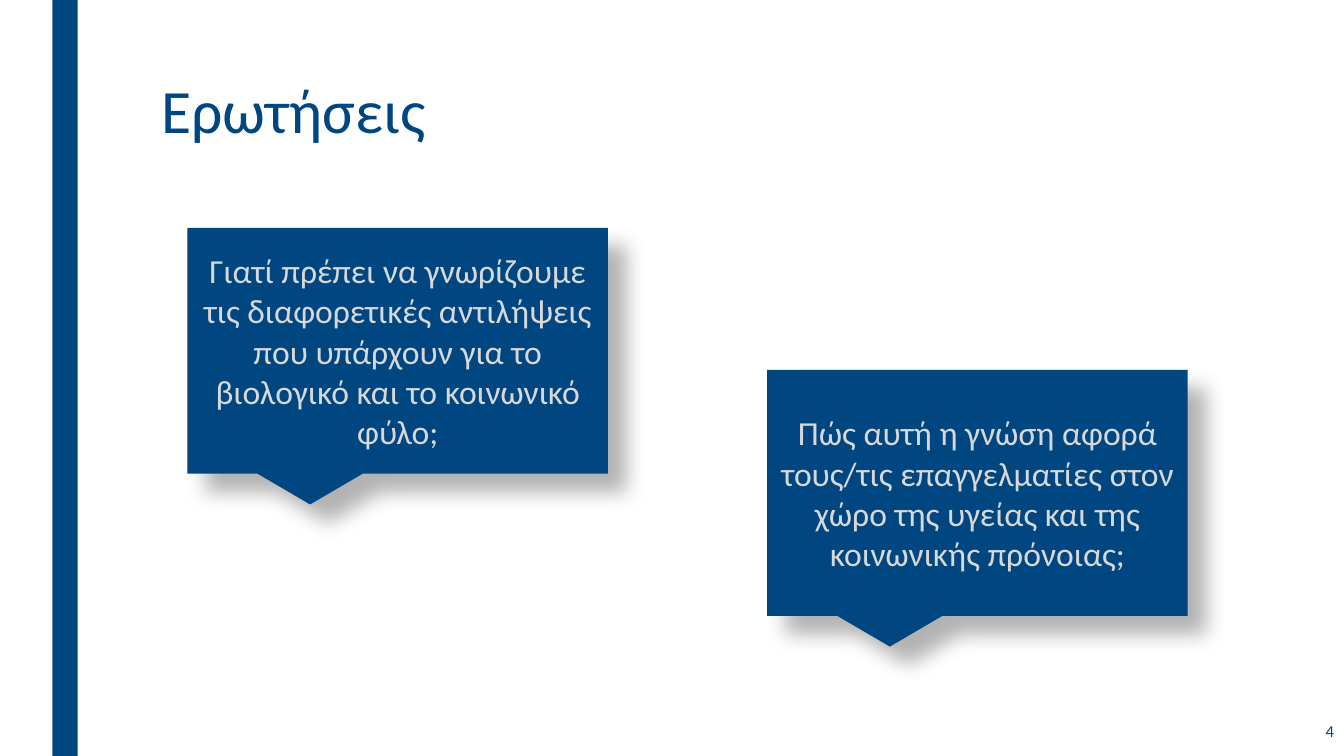
import pptx
import pptx.dml.color
import pptx.enum.shapes
import pptx.enum.text
import pptx.oxml
import pptx.oxml.ns
import pptx.util
from pptx.util import Inches

NAVY = pptx.dml.color.RGBColor(0x00, 0x46, 0x80)
LIGHT_GREY = pptx.dml.color.RGBColor(0xD8, 0xD8, 0xD8)
SHAPES = pptx.enum.shapes.MSO_SHAPE
ALIGN = pptx.enum.text.PP_ALIGN
ANCHOR = pptx.enum.text.MSO_ANCHOR

SOFT_SHADOW = (
    f'<a:effectLst {pptx.oxml.ns.nsdecls("a")}>'
    '<a:outerShdw blurRad="190500" dist="228600" dir="2700000" algn="tl" rotWithShape="0">'
    '<a:srgbClr val="000000"><a:alpha val="30000"/></a:srgbClr>'
    '</a:outerShdw></a:effectLst>'
)


class QuestionSlide:
    font = "Calibri"

    def __init__(self, presentation):
        self.slide = presentation.slides.add_slide(presentation.slide_layouts[6])

    def fill_text(self, shape, text, size, color, align, anchor, line_spacing=None):
        frame = shape.text_frame
        frame.word_wrap = True
        frame.vertical_anchor = anchor
        paragraph = frame.paragraphs[0]
        paragraph.alignment = align
        if line_spacing:
            paragraph.line_spacing = line_spacing
        run = paragraph.add_run()
        run.text = text
        run.font.name = self.font
        run.font.size = pptx.util.Pt(size)
        run.font.color.rgb = color

    def text_box(self, box, text, size, align, anchor, line_spacing=None):
        shape = self.slide.shapes.add_textbox(*map(Inches, box))
        self.fill_text(shape, text, size, NAVY, align, anchor, line_spacing)

    def block(self, kind, box):
        """Add a navy shape without outline or shadow."""
        shape = self.slide.shapes.add_shape(kind, *map(Inches, box))
        shape.fill.solid()
        shape.fill.fore_color.rgb = NAVY
        shape.line.fill.background()
        shape.shadow.inherit = False
        return shape

    def callout(self, left, top, text):
        shape = self.block(SHAPES.RECTANGULAR_CALLOUT, (left, top, 4.17, 2.44))
        properties = shape.element.spPr
        properties.replace(
            properties.find(pptx.oxml.ns.qn("a:effectLst")),
            pptx.oxml.parse_xml(SOFT_SHADOW),
        )
        self.fill_text(shape, text, 24, LIGHT_GREY, ALIGN.CENTER, ANCHOR.MIDDLE)


def main():
    presentation = pptx.Presentation()
    presentation.slide_width = Inches(13.33)
    presentation.slide_height = Inches(7.5)

    page = QuestionSlide(presentation)
    page.block(SHAPES.RECTANGLE, (0.52, 0, 0.25, 7.5))
    page.text_box((1.5, 0.75, 10.5, 1.62), "Ερωτήσεις", 44, ALIGN.LEFT, ANCHOR.TOP, 0.89)
    page.text_box((11.58, 7.03, 1.75, 0.44), "4", 12, ALIGN.RIGHT, ANCHOR.MIDDLE)
    page.callout(
        1.86, 2.26,
        "Γιατί πρέπει να γνωρίζουμε τις διαφορετικές αντιλήψεις "
        "που υπάρχουν για το βιολογικό και το κοινωνικό φύλο;",
    )
    page.callout(
        7.61, 3.67,
        "Πώς αυτή η γνώση αφορά τους/τις επαγγελματίες στον "
        "χώρο της υγείας και της κοινωνικής πρόνοιας;",
    )
    presentation.save("out.pptx")


if __name__ == "__main__":
    main()
